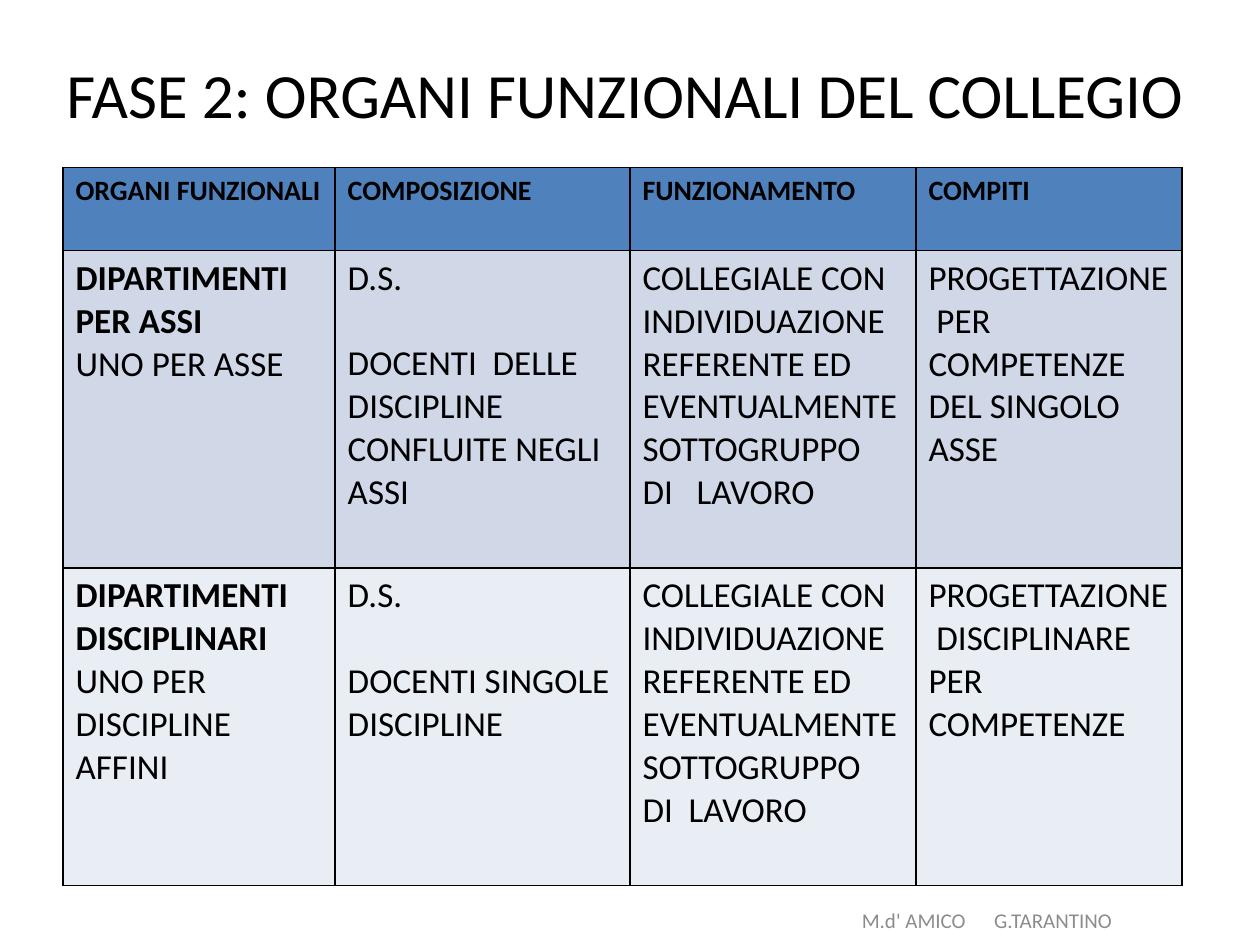
from dataclasses import dataclass

import pptx
import pptx.dml.color
import pptx.enum.text
import pptx.oxml
import pptx.oxml.ns
import pptx.util
from lxml import etree

Pt = pptx.util.Pt
RGBColor = pptx.dml.color.RGBColor
Align = pptx.enum.text.PP_ALIGN
Anchor = pptx.enum.text.MSO_ANCHOR
qn = pptx.oxml.ns.qn

BLACK = RGBColor(0x00, 0x00, 0x00)
GREY = RGBColor(0x8C, 0x8C, 0x8C)
HEADER_BLUE = RGBColor(0x4F, 0x81, 0xBD)
BAND_DARK = RGBColor(0xD0, 0xD8, 0xE8)
BAND_LIGHT = RGBColor(0xE9, 0xED, 0xF4)
FONT = "Calibri"

COLUMN_WIDTHS = (155.52, 168.48, 163.44, 151.92)
HEADINGS = ("ORGANI FUNZIONALI", "COMPOSIZIONE", "FUNZIONAMENTO", "COMPITI")


@dataclass(frozen=True)
class Line:
    text: str
    size: float = 20
    bold: bool = False
    space_after: float = 0


@dataclass(frozen=True)
class Row:
    height: float
    fill: RGBColor
    cells: tuple[tuple[Line, ...], ...]


def department(fill: RGBColor, name: str, rule: str, members: str,
               group: str, task: str) -> Row:
    return Row(181.44, fill, (
        (Line(name, bold=True), Line(rule)),
        (Line("D.S.", space_after=24.4), Line(members)),
        (Line("COLLEGIALE CON INDIVIDUAZIONE"),
         Line(f"REFERENTE ED EVENTUALMENTE SOTTOGRUPPO\n{group}")),
        (Line(task),),
    ))


ROWS = (
    Row(47.52, HEADER_BLUE,
        tuple((Line(heading, 16, True),) for heading in HEADINGS)),
    department(BAND_DARK, "DIPARTIMENTI PER ASSI", "UNO PER ASSE",
               "DOCENTI  DELLE DISCIPLINE CONFLUITE NEGLI ASSI",
               "DI   LAVORO",
               "PROGETTAZIONE\n PER COMPETENZE DEL SINGOLO ASSE"),
    department(BAND_LIGHT, "DIPARTIMENTI DISCIPLINARI",
               "UNO PER DISCIPLINE AFFINI", "DOCENTI SINGOLE DISCIPLINE",
               "DI  LAVORO", "PROGETTAZIONE\n DISCIPLINARE PER COMPETENZE"),
)


def add_span(para, text: str, size: float, bold: bool = False,
             color: RGBColor = BLACK) -> None:
    span = para.add_run()
    span.text = text
    span.font.name = FONT
    span.font.size = Pt(size)
    span.font.bold = bold
    span.font.color.rgb = color


def write_lines(frame, lines: tuple[Line, ...]) -> None:
    for index, line in enumerate(lines):
        para = frame.add_paragraph() if index else frame.paragraphs[0]
        para.space_after = Pt(line.space_after)
        for part_index, part in enumerate(line.text.split("\n")):
            if part_index:
                para.add_line_break()
            add_span(para, part, line.size, line.bold)


def add_borders(cell) -> None:
    properties = cell._tc.get_or_add_tcPr()
    for side in ("a:lnL", "a:lnR", "a:lnT", "a:lnB"):
        border = etree.SubElement(properties, qn(side), w=str(Pt(1)))
        fill = etree.SubElement(border, qn("a:solidFill"))
        etree.SubElement(fill, qn("a:srgbClr"), val=str(BLACK))


def add_title(page) -> None:
    box = page.shapes.title
    box.left, box.top, box.width, box.height = map(Pt, (22.3, 16.5, 669.6, 73.5))
    box.text_frame.vertical_anchor = Anchor.MIDDLE
    para = box.text_frame.paragraphs[0]
    para.alignment = Align.CENTER
    add_span(para, "FASE 2: ORGANI FUNZIONALI DEL COLLEGIO", 36)


def add_organ_table(page) -> None:
    table = page.shapes.add_table(
        len(ROWS), len(COLUMN_WIDTHS), Pt(36), Pt(95.76),
        Pt(sum(COLUMN_WIDTHS)), Pt(sum(row.height for row in ROWS))).table
    for column, width in zip(table.columns, COLUMN_WIDTHS):
        column.width = Pt(width)
    for table_row, row in zip(table.rows, ROWS):
        table_row.height = Pt(row.height)
        for cell, lines in zip(table_row.cells, row.cells):
            add_borders(cell)
            cell.fill.solid()
            cell.fill.fore_color.rgb = row.fill
            write_lines(cell.text_frame, lines)


def add_authors(page) -> None:
    """Put both names on one line, the second at a tab stop."""
    box = page.shapes.add_textbox(Pt(450), Pt(511.2), Pt(228.24), Pt(28.8))
    frame = box.text_frame
    frame.word_wrap = True
    frame.vertical_anchor = Anchor.MIDDLE
    frame.margin_left = Pt(42.5)
    para = frame.paragraphs[0]
    para.alignment = Align.LEFT
    tabs = etree.SubElement(para._p.get_or_add_pPr(), qn("a:tabLst"))
    etree.SubElement(tabs, qn("a:tab"), pos=str(Pt(75.6)), algn="l")
    add_span(para, "M.d' AMICO\tG.TARANTINO", 12, color=GREY)


def main() -> None:
    deck = pptx.Presentation()
    deck.slide_width, deck.slide_height = Pt(720), Pt(540)
    page = deck.slides.add_slide(deck.slide_layouts.get_by_name("Title Only"))
    add_title(page)
    add_organ_table(page)
    add_authors(page)
    deck.save("out.pptx")


if __name__ == "__main__":
    main()
